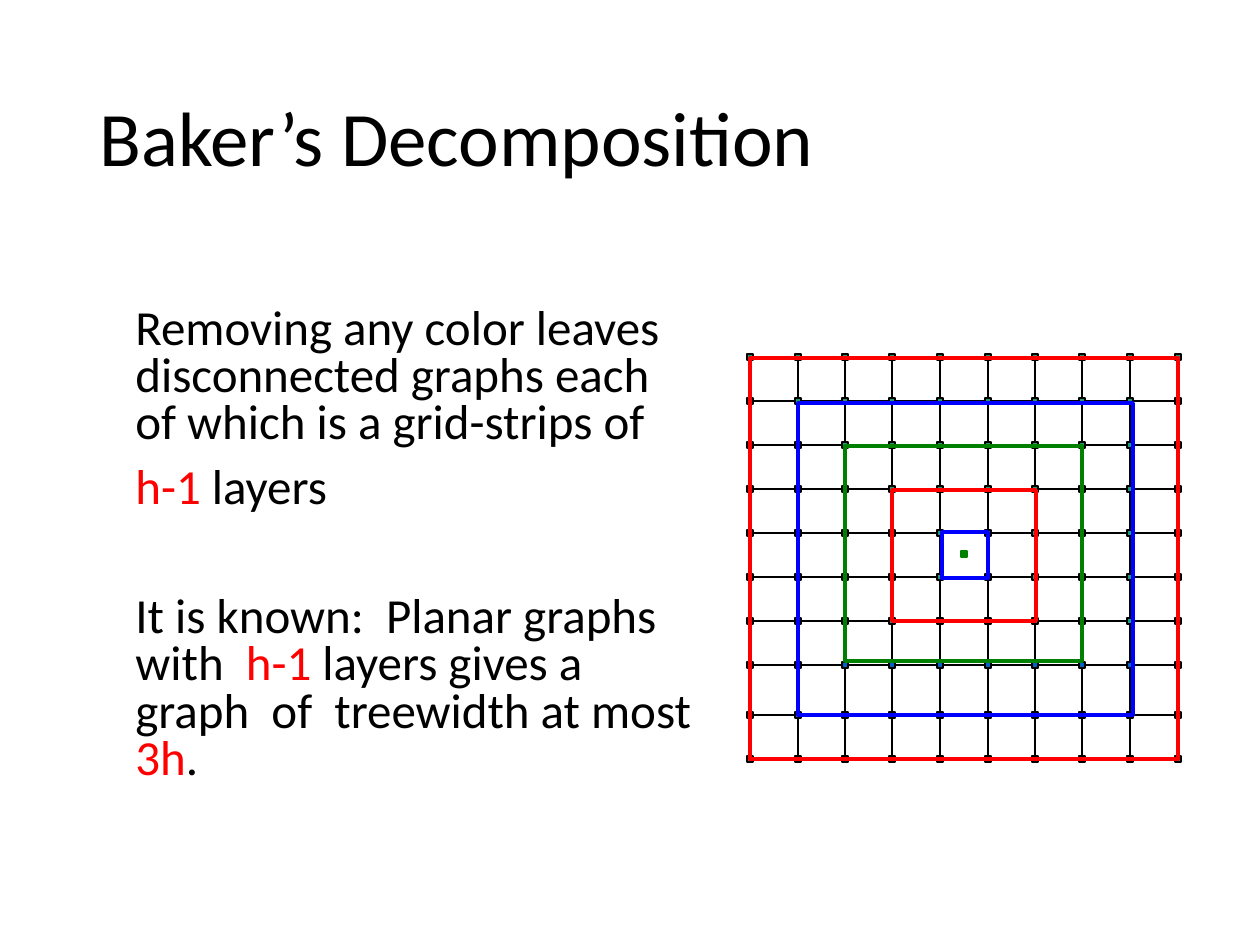
from dataclasses import dataclass

from lxml.etree import SubElement
from pptx import Presentation
from pptx.dml.color import RGBColor as RGB
from pptx.enum.shapes import MSO_CONNECTOR as Connector, MSO_SHAPE as Shape
from pptx.enum.text import MSO_ANCHOR as Anchor
from pptx.oxml.ns import qn
from pptx.util import Pt

EMU_PER_PX = 914400 / 126


def px(length):
    return round(length * EMU_PER_PX)


def apply(target, values):
    for attribute, value in values.items():
        setattr(target, attribute, value)


@dataclass(frozen=True)
class Theme:
    font: str = "Calibri"
    black: RGB = RGB(0, 0, 0)
    red: RGB = RGB(255, 0, 0)
    blue: RGB = RGB(0, 0, 255)
    green: RGB = RGB(0, 128, 0)
    node: RGB = RGB(0x1D, 0x9A, 0x78)
    marked_node: RGB = RGB(0x05, 0x63, 0xC1)
    title_size: int = 44
    body_size: int = 28
    grid_width: float = 1.5
    ring_width: float = 2


class SlideBuilder:
    def __init__(self, slide, theme):
        self.shapes = slide.shapes
        self.theme = theme

    def text(self, box, paragraphs, size, line_spacing, anchor):
        frame = self.shapes.add_textbox(*map(px, box)).text_frame
        apply(frame, {"word_wrap": True, "vertical_anchor": anchor})
        for index, (space_before, runs) in enumerate(paragraphs):
            paragraph = frame.add_paragraph() if index else frame.paragraphs[0]
            apply(paragraph, {"line_spacing": line_spacing,
                              "space_before": Pt(space_before)})
            for wording, color in runs:
                run = paragraph.add_run()
                run.text = wording
                apply(run.font, {"name": self.theme.font, "size": Pt(size)})
                run.font.color.rgb = color

    def rect(self, box, color, width, fill=None):
        rect = self.shapes.add_shape(Shape.RECTANGLE, *map(px, box))
        rect.shadow.inherit = False
        if fill is None:
            rect.fill.background()
        else:
            rect.fill.solid()
            rect.fill.fore_color.rgb = fill
        self.stroke(rect.line, color, width)

    def line(self, *ends):
        edge = self.shapes.add_connector(Connector.STRAIGHT, *map(px, ends))
        SubElement(edge.element.spPr, qn("a:effectLst"))
        self.stroke(edge.line, self.theme.black, self.theme.grid_width)

    def node(self, x, y, color, fill):
        size = 6
        box = (x - size / 2, y - size / 2, size, size)
        self.rect(box, color, self.theme.grid_width, fill)

    def stroke(self, line, color, width):
        line.width = Pt(width)
        line.color.rgb = color


def draw_grid(builder, columns, rows, marked_row):
    theme = builder.theme
    left, right, top, bottom = columns[0], columns[-1], rows[0], rows[-1]
    for x in columns[1:-1]:
        builder.line(x, top, x, bottom)
    for y in rows[1:-1]:
        builder.line(left, y, right, y)
    for y in rows:
        fill = theme.marked_node if y == marked_row else theme.node
        for x in columns:
            builder.node(x, y, theme.black, fill)
    frame = (left, top, right - left, bottom - top)
    builder.rect(frame, theme.black, theme.grid_width)


def main():
    theme = Theme()
    deck = Presentation()
    apply(deck, {"slide_width": px(1260), "slide_height": px(945)})
    builder = SlideBuilder(deck.slides.add_slide(deck.slide_layouts[6]), theme)
    black, red = theme.black, theme.red

    title = [(0, [("Baker’s Decomposition", black)])]
    builder.text((87, 50, 1086, 183), title, theme.title_size, 0.9, Anchor.MIDDLE)

    claims = [
        (10, [("Removing any color leaves disconnected graphs each "
               "of which is a grid-strips of", black)]),
        (10, [("h-1", red), (" layers", black)]),
        (47, [("It is known:  Planar graphs with  ", black), ("h-1 ", red),
              ("layers gives a graph  of  treewidth at most ", black),
              ("3h", red), (".", black)]),
    ]
    builder.text((123, 302, 588, 542), claims, theme.body_size, 0.8, Anchor.TOP)

    columns = [round(750 + 47.5 * step) for step in range(10)]
    rows = [357 + 44 * step for step in range(8)] + [715, 759]
    draw_grid(builder, columns, rows, marked_row=rows[7])

    rings = [
        ((750, 358, 428, 401), red),
        ((798, 403, 335, 312), theme.blue),
        ((845, 446, 237, 215), theme.green),
        ((892, 490, 144, 131), red),
        ((942, 532, 46, 46), theme.blue),
    ]
    for box, color in rings:
        builder.rect(box, color, theme.ring_width)
    builder.node(964, 554, theme.green, theme.green)

    deck.save("out.pptx")


if __name__ == "__main__":
    main()
